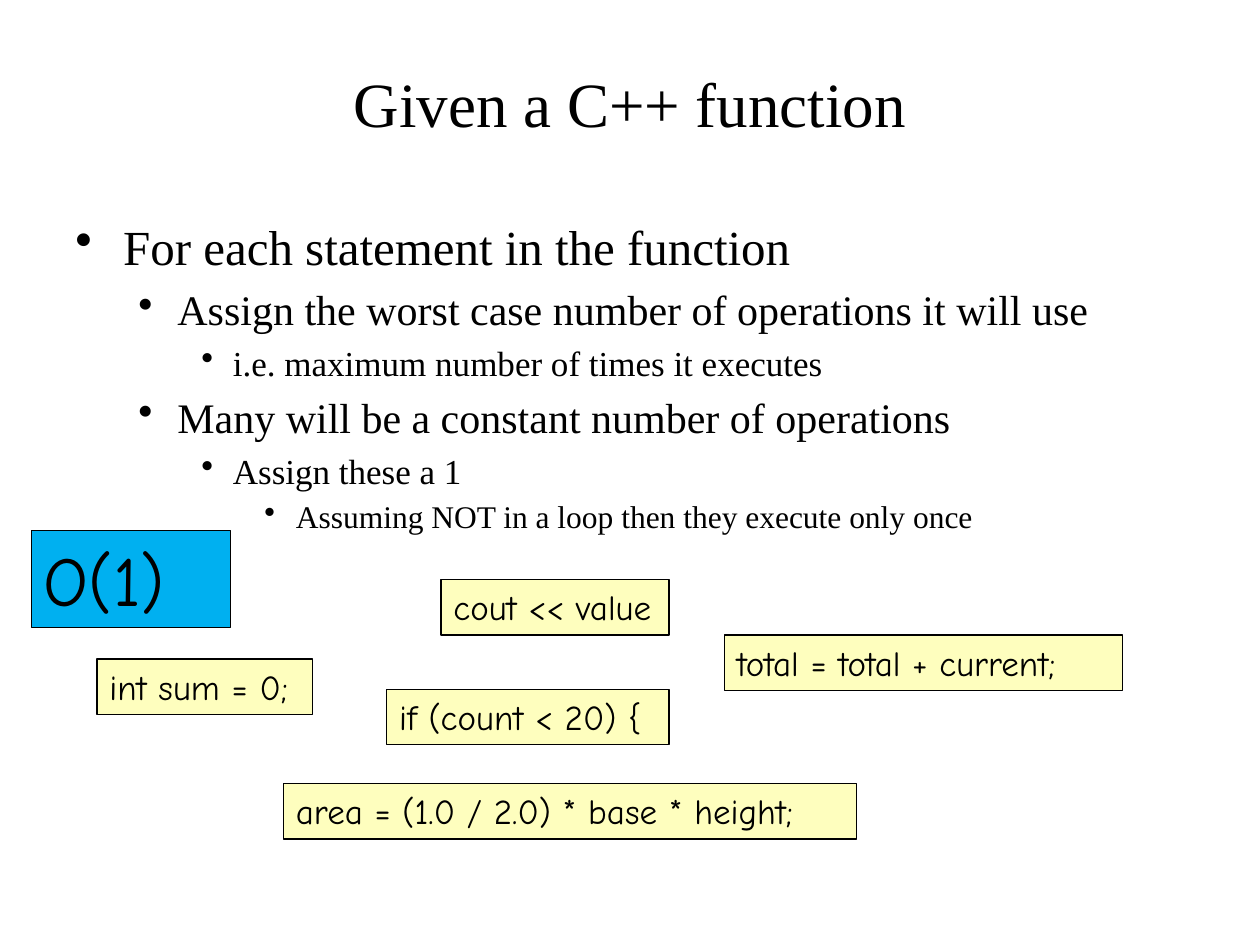
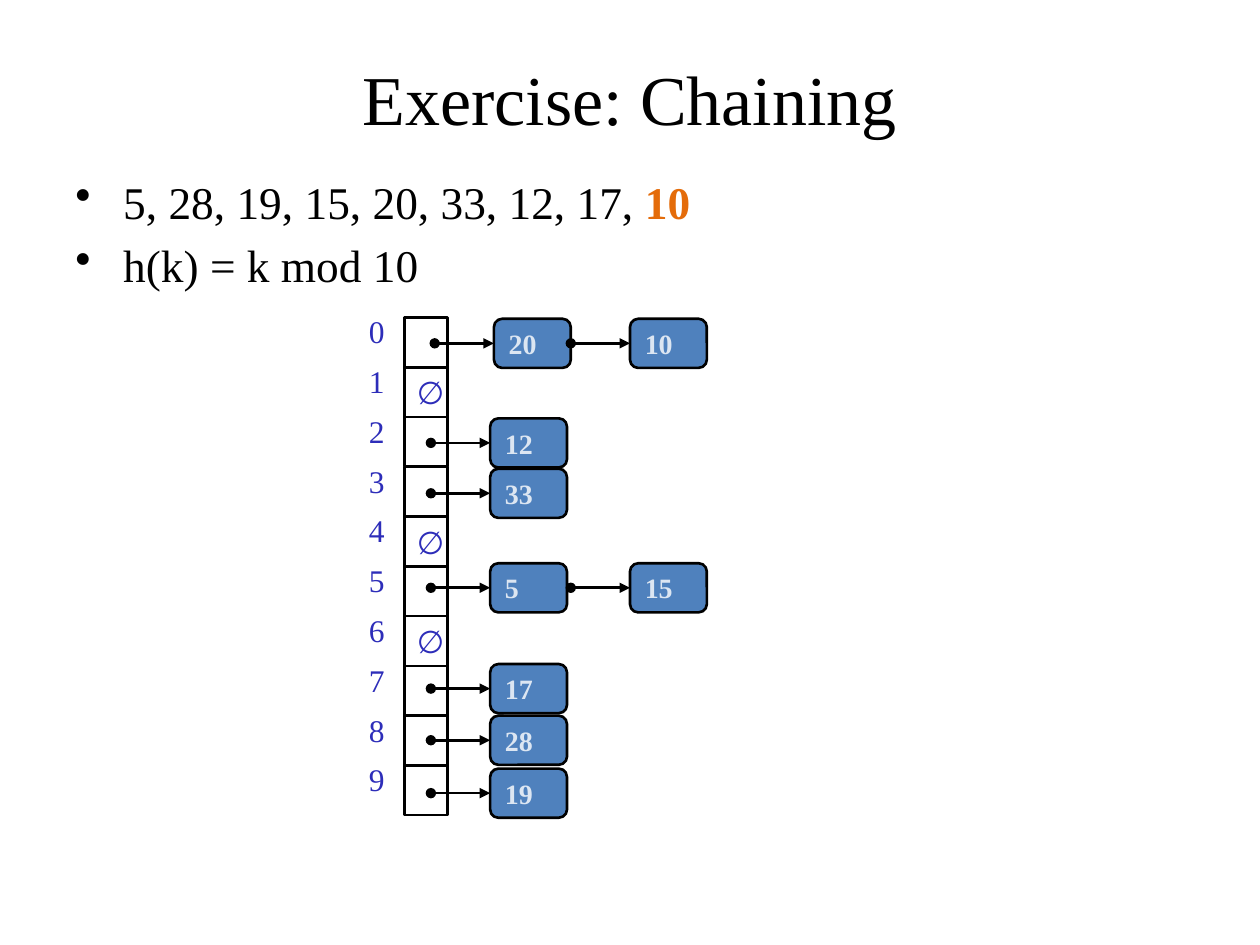
"""Build two slides: operation counts in a C++ function and a hash chaining exercise."""
from dataclasses import dataclass

from pptx import Presentation
from pptx.dml.color import RGBColor
from pptx.enum.shapes import MSO_CONNECTOR, MSO_SHAPE
from pptx.enum.text import MSO_ANCHOR, PP_ALIGN
from pptx.oxml.ns import qn
from pptx.util import Inches, Pt
from lxml.etree import SubElement


@dataclass(frozen=True)
class Theme:
    black: str = "000000"
    accent: str = "E46C0A"
    index: str = "2D2DB9"
    node: str = "4F81BD"
    node_text: str = "DCE6F2"
    code: str = "FEFEBE"
    order: str = "00B0F0"
    serif: str = "Times New Roman"
    hand: str = "Comic Neue"
    sans: str = "Calibri"
    levels: tuple = (28, 24, 20, 18)
    code_size: int = 20
    order_size: int = 40
    index_size: int = 18
    node_size: int = 16
    thin: float = 0.75
    thick: float = 1.5


T = Theme()

FUNCTION_POINTS = [
    (0, "For each statement in the function"),
    (1, "Assign the worst case number of operations it will use"),
    (2, "i.e. maximum number of times it executes"),
    (1, "Many will be a constant number of operations"),
    (2, "Assign these a 1"),
    (3, "Assuming NOT in a loop then they execute only once"),
]
STATEMENTS = [
    ("int sum = 0;", 0.77, 5.23, 1.71),
    ("if (count < 20) {", 3.07, 5.47, 2.24),
    ("cout << value", 3.5, 4.6, 1.81),
    ("area = (1.0 / 2.0) * base * height;", 2.25, 6.22, 4.55),
    ("total = total + current;", 5.75, 5.04, 3.16),
]
CHAINING_POINTS = [
    (0, [("5, 28, 19, 15, 20, 33, 12, 17, ", {}),
         ("10", {"color": T.accent, "bold": True})]),
    (0, "h(k) = k mod 10"),
]
CHAINS = {
    0: (2.53, [("20", 3.92), ("10", 5)]),
    2: (3.32, [("12", 3.89)]),
    3: (3.72, [("33", 3.89)]),
    5: (4.47, [("5", 3.89), ("15", 5)]),
    7: (5.27, [("17", 3.89)]),
    8: (5.68, [("28", 3.89)]),
    9: (6.1, [("19", 3.89)]),
}
SLOTS = 10
SLOT_LEFT, SLOT_TOP, SLOT_W, SLOT_H = 3.21, 2.52, 0.34, 0.395
LABEL_LEFT, LABEL_TOP = 2.83, 2.43
NODE_W, NODE_H, ARROW = 0.61, 0.39, 0.47
INDENTS = [(0.38, 0.38), (0.81, 0.31), (1.25, 0.25), (1.75, 0.25)]


def write(p, text, *, size, font=T.serif, color=T.black, bold=False):
    r = p.add_run()
    r.text = text
    f = r.font
    f.size, f.name, f.bold = Pt(size), font, bold
    f.color.rgb = RGBColor.from_string(color)


def add_text(s, box, text, *, anchor=MSO_ANCHOR.TOP, align=PP_ALIGN.LEFT, **fmt):
    sp = s.shapes.add_textbox(*map(Inches, box))
    fill_frame(sp, text, anchor, align, **fmt)


def fill_frame(sp, text, anchor, align, **fmt):
    tf = sp.text_frame
    tf.word_wrap = True
    tf.vertical_anchor = anchor
    p = tf.paragraphs[0]
    p.alignment = align
    write(p, text, **fmt)


def add_box(s, box, text="", *, shape=MSO_SHAPE.RECTANGLE, fill=None,
            line=T.thick, anchor=MSO_ANCHOR.MIDDLE, **fmt):
    sp = s.shapes.add_shape(shape, *map(Inches, box))
    sp.shadow.inherit = False
    if fill:
        sp.fill.solid()
        sp.fill.fore_color.rgb = RGBColor.from_string(fill)
    else:
        sp.fill.background()
    sp.line.color.rgb = RGBColor.from_string(T.black)
    sp.line.width = Pt(line)
    if text:
        fill_frame(sp, text, anchor, PP_ALIGN.LEFT, **fmt)
    return sp


def add_bullets(s, box, points, scale=1):
    tf = s.shapes.add_textbox(*map(Inches, box)).text_frame
    tf.word_wrap = True
    for i, (level, content) in enumerate(points):
        p = tf.paragraphs[0] if i == 0 else tf.add_paragraph()
        p.level = level
        left, hang = INDENTS[level]
        pPr = p._p.get_or_add_pPr()
        pPr.set("marL", str(Inches(left)))
        pPr.set("indent", str(-Inches(hang)))
        before = SubElement(pPr, qn("a:spcBef"))
        SubElement(before, qn("a:spcPct")).set("val", "20000")
        SubElement(pPr, qn("a:buChar")).set("char", "•")
        runs = [(content, {})] if isinstance(content, str) else content
        for text, fmt in runs:
            write(p, text, size=T.levels[level] * scale, **fmt)


def add_arrow(s, start, y, node, previous):
    cx = s.shapes.add_connector(MSO_CONNECTOR.STRAIGHT, Inches(start), Inches(y),
                                node.left, Inches(y))
    if previous and abs(previous.left + previous.width - Inches(start)) < Inches(0.01):
        cx.begin_connect(previous, 3)
    cx.end_connect(node, 1)
    cx.line.color.rgb = RGBColor.from_string(T.black)
    cx.line.width = Pt(T.thick)
    ln = cx.line._get_or_add_ln()
    SubElement(ln, qn("a:headEnd")).set("type", "oval")
    SubElement(ln, qn("a:tailEnd")).set("type", "triangle")
    SubElement(cx._element.spPr, qn("a:effectLst"))


def add_slide(prs, title, size, height):
    s = prs.slides.add_slide(prs.slide_layouts[6])
    add_text(s, (0.5, 0.3, 9, height), title, size=size,
             anchor=MSO_ANCHOR.MIDDLE, align=PP_ALIGN.CENTER)
    return s


def build_function(prs):
    s = add_slide(prs, "Given a C++ function", 36, 1.03)
    add_bullets(s, (0.5, 1.67, 9, 3.11), FUNCTION_POINTS)
    for text, left, top, width in STATEMENTS:
        add_box(s, (left, top, width, 0.44), text, fill=T.code, line=T.thin,
                anchor=MSO_ANCHOR.TOP, size=T.code_size, font=T.hand)
    add_box(s, (0.25, 4.21, 1.58, 0.77), "O(1)", fill=T.order, line=T.thin,
            anchor=MSO_ANCHOR.TOP, size=T.order_size, font=T.hand)


def build_chaining(prs):
    s = add_slide(prs, "Exercise: Chaining", 40, 0.95)
    add_bullets(s, (0.5, 1.33, 9, 0.92), CHAINING_POINTS, scale=0.925)
    for i in range(SLOTS):
        offset = i * SLOT_H
        add_text(s, (LABEL_LEFT, LABEL_TOP + offset, 0.37, 0.4), str(i),
                 size=T.index_size, color=T.index)
        add_box(s, (SLOT_LEFT, SLOT_TOP + offset, SLOT_W, SLOT_H),
                "" if i in CHAINS else "∅",
                size=T.index_size, font=T.sans, color=T.index)
    for top, nodes in CHAINS.values():
        previous = None
        for key, left in nodes:
            node = add_box(s, (left, top, NODE_W, NODE_H), key,
                           shape=MSO_SHAPE.ROUNDED_RECTANGLE, fill=T.node,
                           size=T.node_size, color=T.node_text, bold=True)
            add_arrow(s, left - ARROW, top + NODE_H / 2, node, previous)
            previous = node


def main():
    prs = Presentation()
    prs.slide_width, prs.slide_height = Inches(10), Inches(7.5)
    build_function(prs)
    build_chaining(prs)
    prs.save("out.pptx")


if __name__ == "__main__":
    main()
